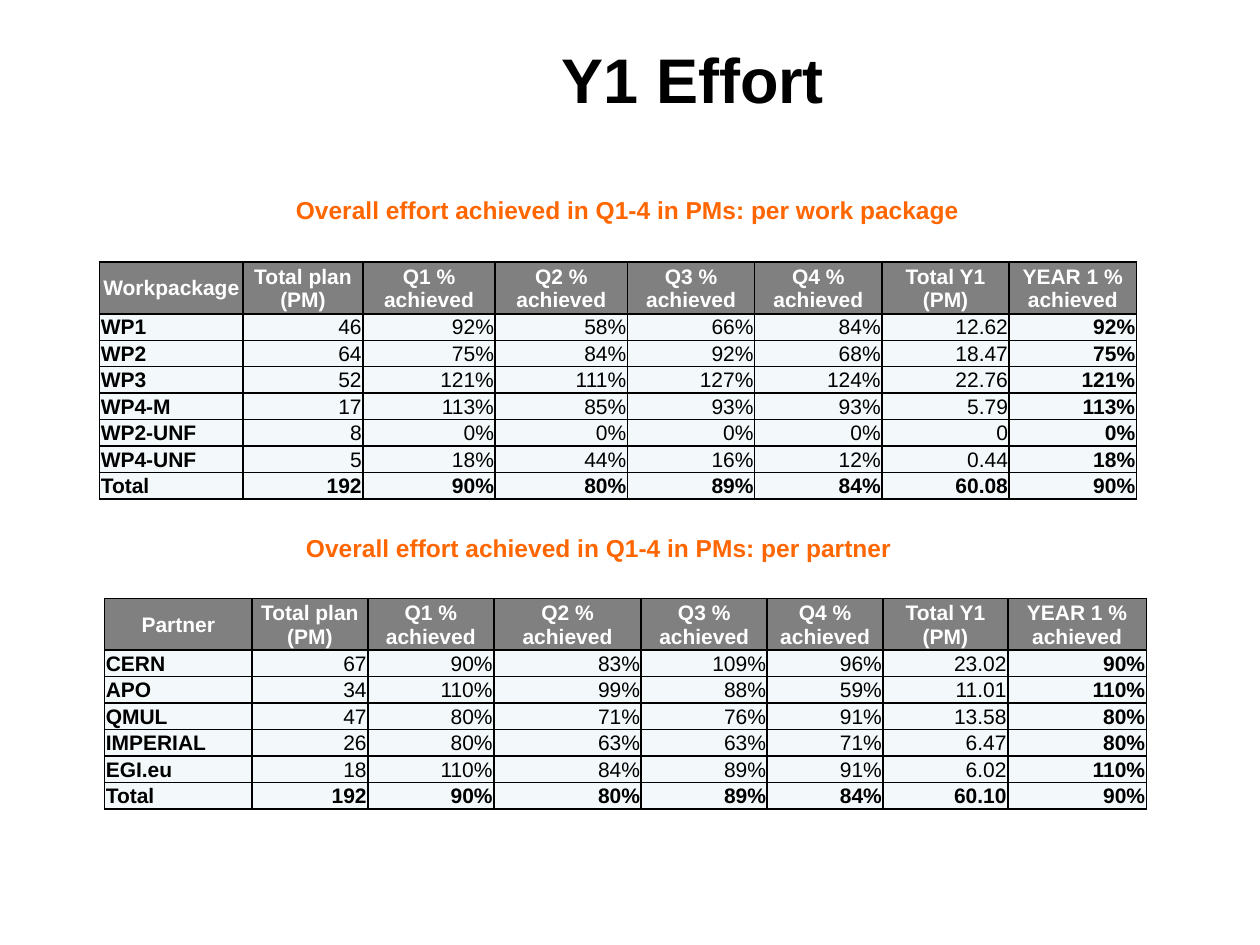
from dataclasses import dataclass

from lxml.etree import SubElement
from pptx import Presentation
from pptx.dml.color import RGBColor
from pptx.enum.text import MSO_ANCHOR, PP_ALIGN
from pptx.oxml.ns import qn
from pptx.util import Inches, Pt


@dataclass(frozen=True)
class Theme:
    font: str = "Arial"
    ink: str = "000000"
    accent: str = "FF6600"
    header_text: str = "FFFFFF"
    header_fill: str = "808080"
    body_fill: str = "F3F9FA"
    title_size: int = 36
    caption_size: int = 14
    table_size: int = 12
    border_width: int = 1


class SlideBuilder:
    def __init__(self, slide, theme):
        self.slide = slide
        self.theme = theme

    def add_span(self, para, text, size, color, bold=True, align=PP_ALIGN.LEFT):
        para.alignment = align
        span = para.add_run()
        span.text = text
        span.font.name = self.theme.font
        span.font.size = Pt(size)
        span.font.bold = bold
        span.font.color.rgb = RGBColor.from_string(color)

    def add_text(self, text, left, top, width, height, size, color,
                 align=PP_ALIGN.LEFT, anchor=MSO_ANCHOR.TOP):
        box = self.slide.shapes.add_textbox(
            Inches(left), Inches(top), Inches(width), Inches(height))
        frame = box.text_frame
        frame.word_wrap = True
        frame.vertical_anchor = anchor
        self.add_span(frame.paragraphs[0], text, size, color, align=align)

    def add_borders(self, cell):
        """Rule all four sides; lines must come before the fill in the cell XML."""
        properties = cell._tc.get_or_add_tcPr()
        for side in ("a:lnL", "a:lnR", "a:lnT", "a:lnB"):
            line = SubElement(properties, qn(side), w=str(Pt(self.theme.border_width)))
            fill = SubElement(line, qn("a:solidFill"))
            SubElement(fill, qn("a:srgbClr"), val=self.theme.ink)

    def fill_cell(self, cell, text, fill, color, bold, align):
        cell.margin_left = cell.margin_right = cell.margin_top = Inches(0.01)
        cell.margin_bottom = 0
        cell.vertical_anchor = MSO_ANCHOR.MIDDLE
        self.add_borders(cell)
        cell.fill.solid()
        cell.fill.fore_color.rgb = RGBColor.from_string(fill)
        self.add_span(cell.text_frame.paragraphs[0], text, self.theme.table_size,
                      color, bold, align)

    def add_table(self, rows, left, top, widths, header_height=0.41, row_height=0.21):
        theme = self.theme
        heights = [header_height] + [row_height] * (len(rows) - 1)
        table = self.slide.shapes.add_table(
            len(rows), len(widths), Inches(left), Inches(top),
            Inches(sum(widths)), Inches(sum(heights))).table
        table.horz_banding = False
        for column, width in zip(table.columns, widths):
            column.width = Inches(width)
        for row, height in zip(table.rows, heights):
            row.height = Inches(height)
        last_row, last_column = len(rows) - 1, len(widths) - 1
        for r, values in enumerate(rows):
            for c, value in enumerate(values):
                if r == 0:
                    style = (theme.header_fill, theme.header_text, True, PP_ALIGN.CENTER)
                else:
                    bold = r == last_row or c in (0, last_column)
                    align = PP_ALIGN.LEFT if c == 0 else PP_ALIGN.RIGHT
                    style = (theme.body_fill, theme.ink, bold, align)
                self.fill_cell(table.cell(r, c), value, *style)


MEASURES = ["Total plan (PM)", *(f"Q{quarter} % achieved" for quarter in range(1, 5)),
            "Total Y1 (PM)", "YEAR 1 % achieved"]

WORK_PACKAGES = [
    ["Workpackage", *MEASURES],
    ["WP1", "46", "92%", "58%", "66%", "84%", "12.62", "92%"],
    ["WP2", "64", "75%", "84%", "92%", "68%", "18.47", "75%"],
    ["WP3", "52", "121%", "111%", "127%", "124%", "22.76", "121%"],
    ["WP4-M", "17", "113%", "85%", "93%", "93%", "5.79", "113%"],
    ["WP2-UNF", "8", "0%", "0%", "0%", "0%", "0", "0%"],
    ["WP4-UNF", "5", "18%", "44%", "16%", "12%", "0.44", "18%"],
    ["Total", "192", "90%", "80%", "89%", "84%", "60.08", "90%"],
]

PARTNERS = [
    ["Partner", *MEASURES],
    ["CERN", "67", "90%", "83%", "109%", "96%", "23.02", "90%"],
    ["APO", "34", "110%", "99%", "88%", "59%", "11.01", "110%"],
    ["QMUL", "47", "80%", "71%", "76%", "91%", "13.58", "80%"],
    ["IMPERIAL", "26", "80%", "63%", "63%", "71%", "6.47", "80%"],
    ["EGI.eu", "18", "110%", "84%", "89%", "91%", "6.02", "110%"],
    ["Total", "192", "90%", "80%", "89%", "84%", "60.10", "90%"],
]


def main():
    deck = Presentation()
    deck.slide_width, deck.slide_height = Inches(10), Inches(7.5)
    theme = Theme()
    page = SlideBuilder(deck.slides.add_slide(deck.slide_layouts[6]), theme)

    page.add_text("Y1 Effort", 1, 0, 9, 1.25, theme.title_size, theme.ink,
                  PP_ALIGN.CENTER, MSO_ANCHOR.MIDDLE)
    page.add_text("Overall effort achieved in Q1-4 in PMs: per work package",
                  2.25, 1.5, 5.83, 0.34, theme.caption_size, theme.accent)
    page.add_text("Overall effort achieved in Q1-4 in PMs: per partner",
                  2.33, 4.18, 5.11, 0.34, theme.caption_size, theme.accent)
    page.add_table(WORK_PACKAGES, 0.79, 2.08,
                   [1.14, 0.95, 1.05, 1.05, 1.01, 1.01, 1.01, 1.01])
    page.add_table(PARTNERS, 0.83, 4.75,
                   [1.17, 0.92, 1, 1.17, 1, 0.92, 0.99, 1.1])

    deck.save("out.pptx")


if __name__ == "__main__":
    main()
